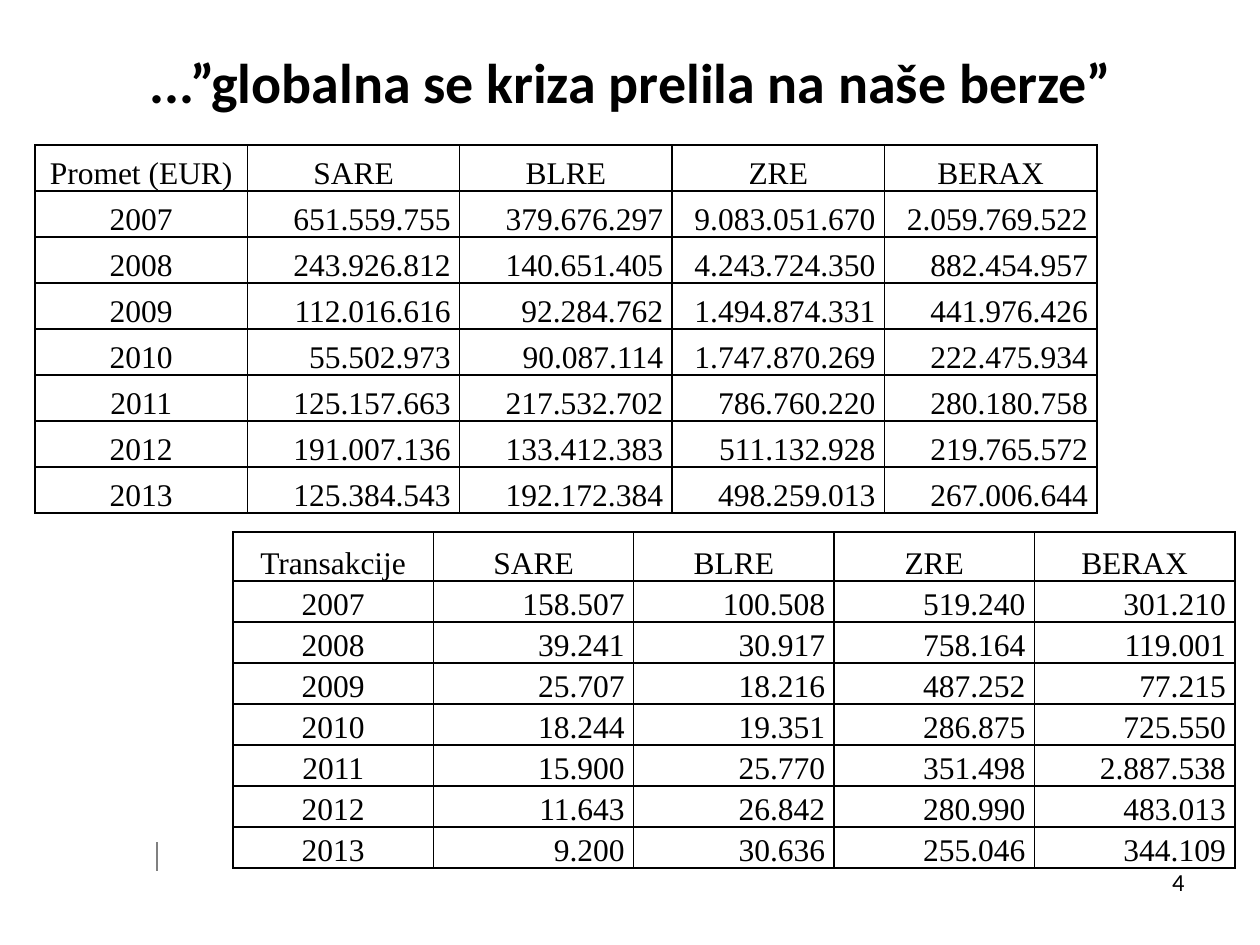
from lxml import etree
from pptx import Presentation
from pptx.dml.color import RGBColor
from pptx.enum.shapes import MSO_CONNECTOR
from pptx.enum.text import MSO_ANCHOR, PP_ALIGN
from pptx.oxml.ns import qn
from pptx.util import Emu, Pt

LEFT, CENTER, RIGHT = PP_ALIGN.LEFT, PP_ALIGN.CENTER, PP_ALIGN.RIGHT
MIDDLE, BOTTOM = MSO_ANCHOR.MIDDLE, MSO_ANCHOR.BOTTOM
STRAIGHT = MSO_CONNECTOR.STRAIGHT
TITLE_ONLY = 5
BLACK, GREY = "000000", "808080"
EXCHANGES = ["SARE", "BLRE", "ZRE", "BERAX"]

TURNOVER = [
    ["Promet (EUR)", *EXCHANGES],
    ["2007", "651.559.755", "379.676.297", "9.083.051.670", "2.059.769.522"],
    ["2008", "243.926.812", "140.651.405", "4.243.724.350", "882.454.957"],
    ["2009", "112.016.616", "92.284.762", "1.494.874.331", "441.976.426"],
    ["2010", "55.502.973", "90.087.114", "1.747.870.269", "222.475.934"],
    ["2011", "125.157.663", "217.532.702", "786.760.220", "280.180.758"],
    ["2012", "191.007.136", "133.412.383", "511.132.928", "219.765.572"],
    ["2013", "125.384.543", "192.172.384", "498.259.013", "267.006.644"],
]
TRANSACTIONS = [
    ["Transakcije", *EXCHANGES],
    ["2007", "158.507", "100.508", "519.240", "301.210"],
    ["2008", "39.241", "30.917", "758.164", "119.001"],
    ["2009", "25.707", "18.216", "487.252", "77.215"],
    ["2010", "18.244", "19.351", "286.875", "725.550"],
    ["2011", "15.900", "25.770", "351.498", "2.887.538"],
    ["2012", "11.643", "26.842", "280.990", "483.013"],
    ["2013", "9.200", "30.636", "255.046", "344.109"],
]


def px(length):
    return Emu(round(length * 914400 / 126))


def color(value):
    return RGBColor.from_string(value)


def write(frame, text, size=18, font="Times New Roman", bold=False,
          align=LEFT, spacing=None):
    para = frame.paragraphs[0]
    para.alignment = align
    para.line_spacing = spacing
    span = para.add_run()
    span.text = text
    span.font.size = Pt(size)
    span.font.name = font
    span.font.bold = bold
    span.font.color.rgb = color(BLACK)


def add_title(page, text):
    title = page.shapes.title
    title.left, title.top, title.width, title.height = map(px, (64, 26, 1134, 110))
    title.text_frame.vertical_anchor = MIDDLE
    write(title.text_frame, text, size=32, font="Calibri", bold=True, align=CENTER)


def add_page_number(page, text):
    box = page.shapes.add_textbox(*map(px, (903, 861, 294, 65)))
    box.text_frame.word_wrap = True
    write(box.text_frame, text, size=14, font="Calibri", align=RIGHT)


def add_rule(page, x, top, bottom):
    rule = page.shapes.add_connector(STRAIGHT, px(x), px(bottom), px(x), px(top))
    rule.line.color.rgb = color(GREY)
    rule.line.width = Pt(0.75)
    etree.SubElement(rule._element.spPr, qn("a:effectLst"))


def add_borders(cell):
    properties = cell._tc.get_or_add_tcPr()
    for side in ("a:lnL", "a:lnR", "a:lnT", "a:lnB"):
        border = etree.SubElement(properties, qn(side), w=str(Pt(1)))
        fill = etree.SubElement(border, qn("a:solidFill"))
        etree.SubElement(fill, qn("a:srgbClr"), val=BLACK)


def format_cell(cell, text, align, spacing):
    add_borders(cell)
    cell.fill.background()
    cell.vertical_anchor = BOTTOM
    cell.margin_left = cell.margin_right = px(9)
    cell.margin_top = cell.margin_bottom = 0
    write(cell.text_frame, text, align=align, spacing=spacing)


def add_grid(page, records, left, top, width, header_height, row_height, spacing):
    row_count, column_count = len(records), len(records[0])
    height = header_height + row_height * (row_count - 1)
    table = page.shapes.add_table(row_count, column_count,
                                  *map(px, (left, top, width, height))).table
    table.first_row = table.horz_banding = False
    for row_index, record in enumerate(records):
        table.rows[row_index].height = px(row_height if row_index else header_height)
        for column_index, text in enumerate(record):
            align = RIGHT if row_index and column_index else CENTER
            format_cell(table.cell(row_index, column_index), text, align, spacing)


def main():
    deck = Presentation()
    deck.slide_width, deck.slide_height = px(1260), px(945)
    page = deck.slides.add_slide(deck.slide_layouts[TITLE_ONLY])
    add_rule(page, 157, 842, 871)
    add_title(page, "...”globalna se kriza prelila na naše berze”")
    add_page_number(page, "4")
    add_grid(page, TURNOVER, 35, 145, 1062, 46, 46, spacing=1.15)
    add_grid(page, TRANSACTIONS, 233, 532, 1002, 49, 41, spacing=1.05)
    deck.save("out.pptx")


if __name__ == "__main__":
    main()
